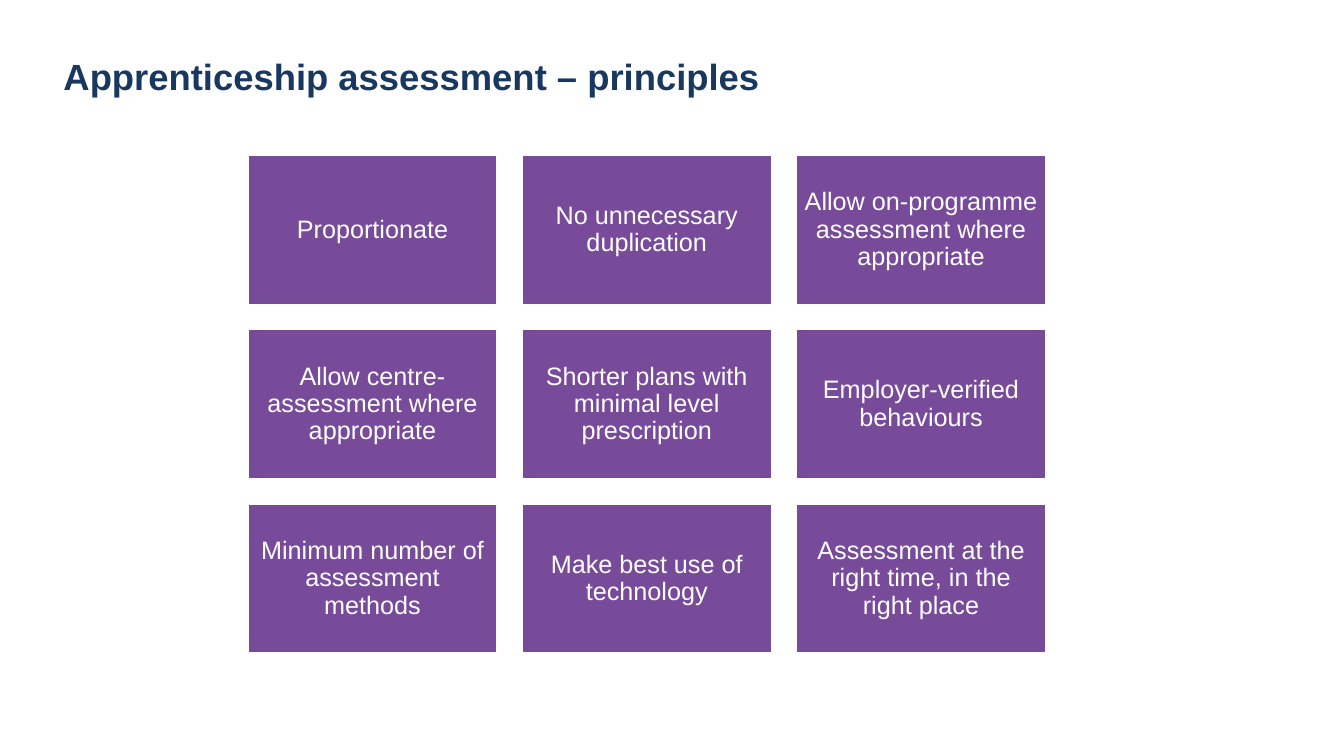
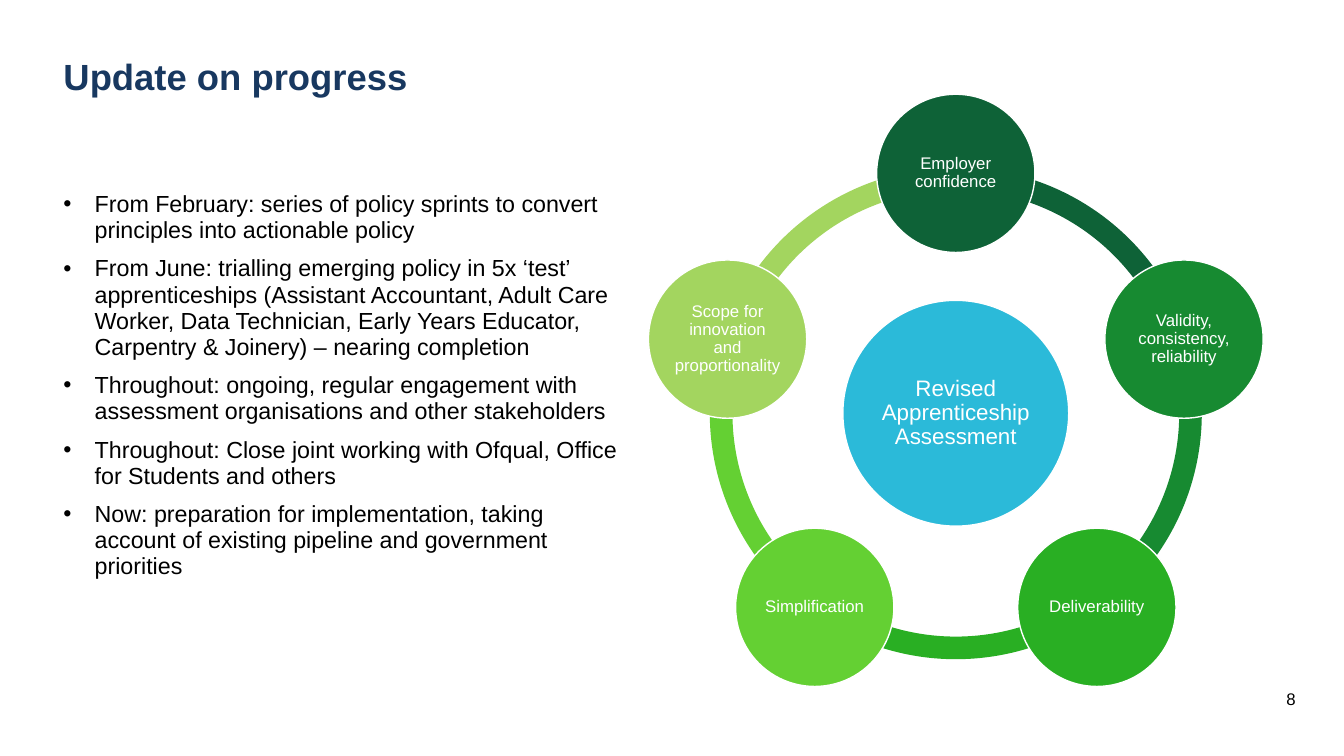
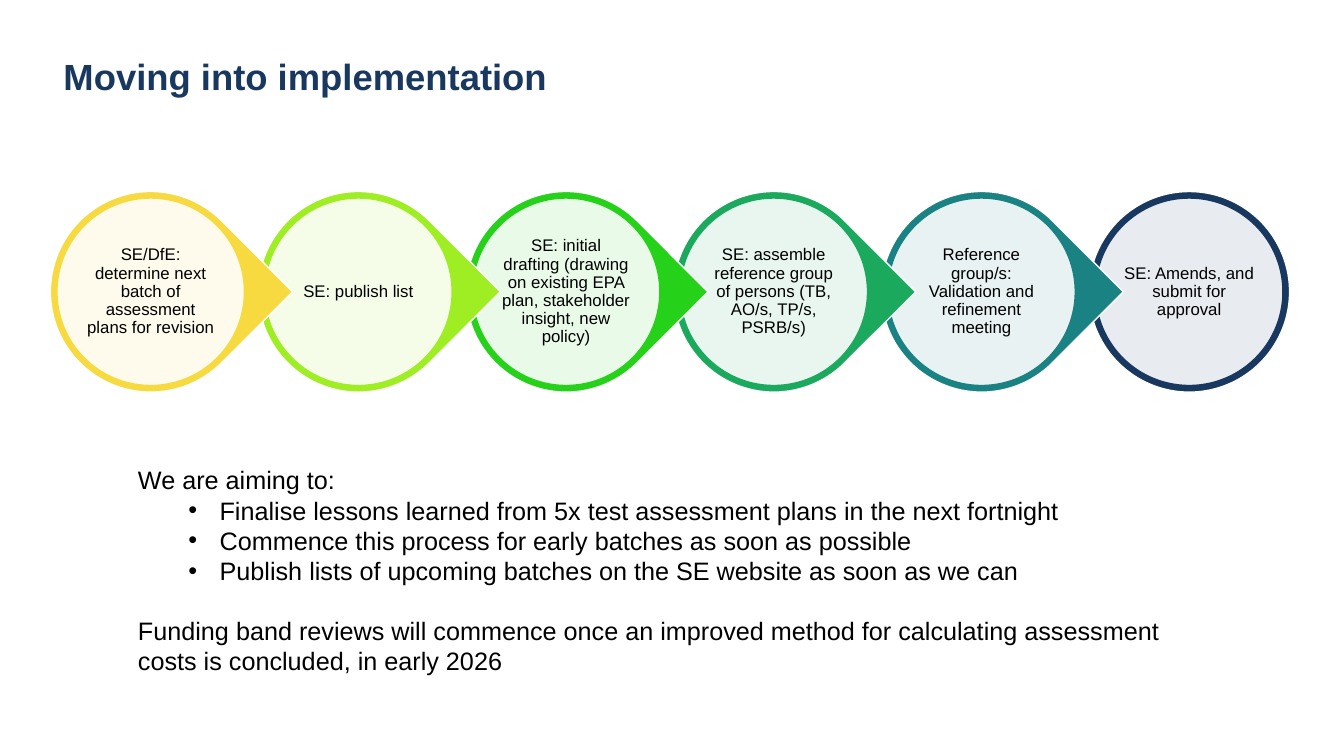
"""Three slides on the revised apprenticeship assessment."""
from dataclasses import dataclass
from math import cos, radians, sin

from lxml import etree
from pptx import Presentation
from pptx.dml.color import RGBColor
from pptx.enum.shapes import MSO_SHAPE
from pptx.enum.text import MSO_ANCHOR, PP_ALIGN
from pptx.oxml.ns import qn
from pptx.util import Inches, Pt

RECTANGLE = MSO_SHAPE.RECTANGLE
ELLIPSE = MSO_SHAPE.OVAL
BLOCK_ARC = MSO_SHAPE.BLOCK_ARC
TEARDROP = MSO_SHAPE.TEAR
TOP, MIDDLE = MSO_ANCHOR.TOP, MSO_ANCHOR.MIDDLE
LEFT, CENTER, RIGHT = PP_ALIGN.LEFT, PP_ALIGN.CENTER, PP_ALIGN.RIGHT


@dataclass(frozen=True)
class Theme:
    """Colours, font and type sizes of the deck."""
    font: str = "Arial"
    navy: str = "183860"
    purple: str = "774B99"
    cyan: str = "2BBAD9"
    white: str = "FFFFFF"
    black: str = "000000"
    ring: tuple = ("0E6237", "178A31", "29AF23", "64D033", "A3D55F")
    steps: tuple = ("F6DA40", "9FED23", "26D119", "1BA95E", "1B8283", "183860")
    title_size: float = 26
    large_size: float = 18
    body_size: float = 16.6
    hub_size: float = 16
    small_size: float = 12
    tight: float = 0.9


@dataclass(frozen=True)
class Box:
    """A rectangle on the page, in inches."""
    left: float
    top: float
    width: float
    height: float

    def place(self):
        """Return the four lengths that python-pptx expects."""
        return [Inches(v) for v in (self.left, self.top, self.width, self.height)]

    def inset(self, gap):
        """Return the box shrunk by a gap on every side."""
        return Box(self.left + gap, self.top + gap,
                   self.width - 2 * gap, self.height - 2 * gap)


THEME = Theme()
TITLE_BOX = Box(0.63, 0.54, 12.04, 0.79)
NUMBER_BOX = Box(12.46, 6.83, 0.39, 0.2)

PRINCIPLES = (
    "Proportionate",
    "No unnecessary duplication",
    "Allow on-programme assessment where appropriate",
    "Allow centre-assessment where appropriate",
    "Shorter plans with minimal level prescription",
    "Employer-verified behaviours",
    "Minimum number of assessment methods",
    "Make best use of technology",
    "Assessment at the right time, in the right place",
)
PROGRESS = (
    "From February: series of policy sprints to convert principles into actionable policy",
    "From June: trialling emerging policy in 5x ‘test’ apprenticeships (Assistant Accountant, "
    "Adult Care Worker, Data Technician, Early Years Educator, Carpentry & Joinery) "
    "– nearing completion",
    "Throughout: ongoing, regular engagement with assessment organisations and other stakeholders",
    "Throughout: Close joint working with Ofqual, Office for Students and others",
    "Now: preparation for implementation, taking account of existing pipeline "
    "and government priorities",
)
AIMS = (
    "Employer confidence",
    "Validity, consistency, reliability",
    "Deliverability",
    "Simplification",
    "Scope for innovation and proportionality",
)
STEPS = (
    "SE/DfE: determine next batch of assessment plans for revision",
    "SE: publish list",
    "SE: initial drafting (drawing on existing EPA plan, stakeholder insight, new policy)",
    "SE: assemble reference group of persons (TB, AO/s, TP/s, PSRB/s)",
    "Reference group/s: Validation and refinement meeting",
    "SE: Amends, and submit for approval",
)
NEXT_INTRO = "We are aiming to:"
NEXT_ACTIONS = (
    "Finalise lessons learned from 5x test assessment plans in the next fortnight",
    "Commence this process for early batches as soon as possible",
    "Publish lists of upcoming batches on the SE website as soon as we can",
)
NEXT_FUNDING = ("Funding band reviews will commence once an improved method for calculating "
                "assessment costs is concluded, in early 2026")


def square_at(x, y, size):
    """Return a square box centred on a point."""
    return Box(x - size / 2, y - size / 2, size, size)


def write(frame, lines, size, color, align=LEFT, anchor=TOP, margins=(0, 0),
          bold=False, spacing=None):
    """Fill a text frame with equally styled paragraphs and return them."""
    frame.word_wrap = True
    frame.vertical_anchor = anchor
    frame.margin_left = frame.margin_right = Inches(margins[0])
    frame.margin_top = frame.margin_bottom = Inches(margins[1])
    paras = []
    for index, line in enumerate(lines):
        para = frame.add_paragraph() if index else frame.paragraphs[0]
        para.text = line
        para.alignment = align
        para.line_spacing = spacing
        para.font.name = THEME.font
        para.font.size = Pt(size)
        para.font.bold = bold
        para.font.color.rgb = RGBColor.from_string(color)
        paras.append(para)
    return paras


def add_text(page, box, lines, size, color, **style):
    """Add a text box and return its paragraphs."""
    frame = page.shapes.add_textbox(*box.place()).text_frame
    return write(frame, lines, size, color, **style)


def add_bullet(para, indent):
    """Give a paragraph a round bullet with a hanging indent."""
    props = para._p.get_or_add_pPr()
    props.set("marL", str(Inches(indent)))
    props.set("indent", str(-Inches(0.31)))
    etree.SubElement(props, qn("a:buFont"), typeface=THEME.font)
    etree.SubElement(props, qn("a:buChar"), char="•")


def add_figure(page, kind, box, fill, line=None):
    """Add a flat preset shape, outlined if a line colour is given."""
    figure = page.shapes.add_shape(kind, *box.place())
    figure.shadow.inherit = False
    figure.fill.solid()
    figure.fill.fore_color.rgb = RGBColor.from_string(fill)
    if line:
        figure.line.color.rgb = RGBColor.from_string(line)
        figure.line.width = Pt(1)
    else:
        figure.line.fill.background()
    return figure


def label(figure, text, size, color=THEME.white, margin=0.02):
    """Centre a label inside a shape."""
    write(figure.text_frame, [text], size, color, align=CENTER, anchor=MIDDLE,
          margins=(margin, margin), spacing=THEME.tight)


def make_translucent(figure, percent):
    """Set the opacity of a solid fill."""
    color = figure._element.spPr.find(qn("a:solidFill"))[0]
    etree.SubElement(color, qn("a:alpha"), val=str(percent * 1000))


def add_page(deck, title):
    """Add a blank page with the shared title."""
    page = deck.slides.add_slide(deck.slide_layouts[6])
    add_text(page, TITLE_BOX, [title], THEME.title_size, THEME.navy, bold=True)
    return page


def add_principles(page, box, columns=3, gap=0.25):
    """Lay the principles out as a grid of tiles."""
    rows = len(PRINCIPLES) // columns
    width = (box.width - gap * (columns - 1)) / columns
    height = (box.height - gap * (rows - 1)) / rows
    for index, text in enumerate(PRINCIPLES):
        row, column = divmod(index, columns)
        tile = Box(box.left + column * (width + gap),
                   box.top + row * (height + gap), width, height)
        figure = add_figure(page, RECTANGLE, tile, THEME.purple, THEME.white)
        label(figure, text, THEME.large_size, margin=0.07)


def add_progress(page, box):
    """List the progress made so far."""
    for para in add_text(page, box, PROGRESS, THEME.body_size, THEME.black, spacing=0.94):
        para.space_after = Pt(8.5)
        add_bullet(para, 0.31)


def add_ring(page, box):
    """Draw the hub and the aims joined by a ring around it."""
    x, y = box.left + box.width / 2, box.top + box.height / 2
    orbit, step = 2.38, 360 / len(AIMS)
    angles = [(270 + step * index) % 360 for index in range(len(AIMS))]
    for angle, color in zip(angles, THEME.ring):
        arc = add_figure(page, BLOCK_ARC, box, color)
        arc.adjustments[0] = angle * 0.6
        arc.adjustments[1] = (angle + step) % 360 * 0.6
        arc.adjustments[2] = 0.046
    hub = add_figure(page, ELLIPSE, square_at(x, y, 2.24), THEME.cyan, THEME.white)
    label(hub, "Revised Apprenticeship Assessment", THEME.hub_size)
    for angle, color, text in zip(angles, THEME.ring, AIMS):
        turn = radians(angle)
        spot = square_at(x + orbit * cos(turn), y + orbit * sin(turn), 1.57)
        node = add_figure(page, ELLIPSE, spot, color, THEME.white)
        label(node, text, THEME.small_size)


def add_steps(page, box):
    """Draw the process from last to first, so each drop points over the next."""
    size = box.height
    pitch = (box.width - size) / (len(STEPS) - 1)
    last = len(STEPS) - 1
    for index in range(last, -1, -1):
        color = THEME.steps[index]
        spot = Box(box.left + index * pitch, box.top, size, size)
        kind = ELLIPSE if index == last else TEARDROP
        drop = add_figure(page, kind, spot, color, THEME.white)
        if kind == TEARDROP:
            drop.rotation = 45
        disc = add_figure(page, ELLIPSE, spot.inset(0.065), THEME.white, color)
        make_translucent(disc, 90)
        label(disc, STEPS[index], THEME.small_size, THEME.black, margin=0.01)


def add_next_actions(page, box):
    """State the aims and the funding review."""
    lines = (NEXT_INTRO, *NEXT_ACTIONS, NEXT_FUNDING)
    paras = add_text(page, box, lines, THEME.large_size, THEME.black, margins=(0.1, 0.05))
    for para in paras[1:-1]:
        para.level = 1
        add_bullet(para, 0.81)
    paras[-1].space_before = Pt(21)


def build_principles(deck):
    """Build the page of principles."""
    page = add_page(deck, "Apprenticeship assessment – principles")
    add_principles(page, Box(2.46, 1.54, 7.91, 4.94))


def build_progress(deck):
    """Build the page of progress."""
    page = add_page(deck, "Update on progress")
    add_progress(page, Box(0.63, 1.9, 5.54, 4.34))
    add_text(page, NUMBER_BOX, ["8"], THEME.small_size, THEME.black,
             align=RIGHT, anchor=MIDDLE)
    add_ring(page, Box(7.04, 1.66, 4.88, 4.88))


def build_implementation(deck):
    """Build the page of implementation."""
    page = add_page(deck, "Moving into implementation")
    add_steps(page, Box(0.5, 1.9, 12.29, 1.99))
    add_next_actions(page, Box(1.27, 4.56, 10.79, 2.22))


def main():
    """Build and save the deck."""
    deck = Presentation()
    deck.slide_width, deck.slide_height = Inches(13.33), Inches(7.5)
    build_principles(deck)
    build_progress(deck)
    build_implementation(deck)
    deck.save("out.pptx")


if __name__ == "__main__":
    main()
